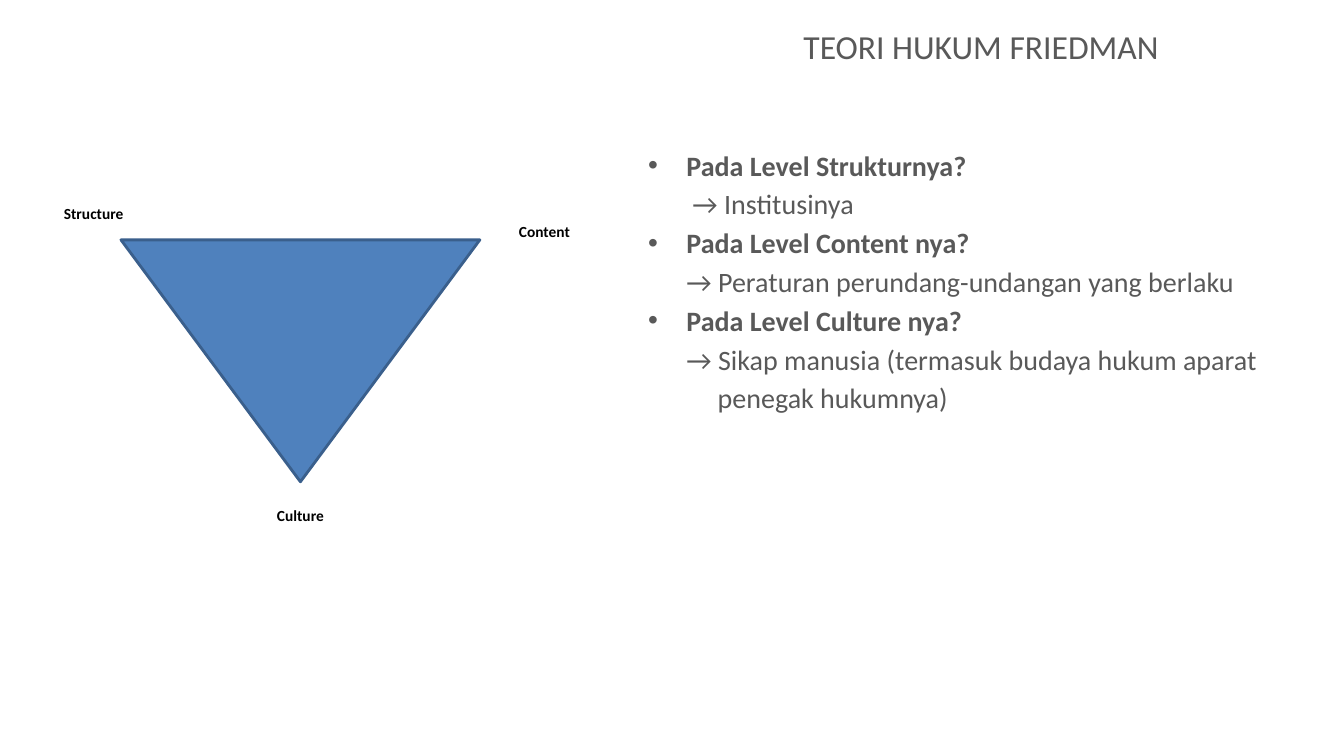
from lxml.etree import SubElement
from pptx import Presentation
from pptx.dml.color import RGBColor
from pptx.enum.shapes import MSO_SHAPE
from pptx.enum.text import MSO_ANCHOR, PP_ALIGN
from pptx.oxml.ns import qn
from pptx.util import Inches, Pt

COLORS = {"text": "595959", "label": "000000", "triangle": "4F81BD",
          "outline": "3A5F8C", "white": "FFFFFF"}


def add_text(paragraph, text, size, color, bold=False, align=PP_ALIGN.LEFT,
             indent=0, bullet=None, space_before=0, line_spacing=1.0):
    """Fill a paragraph; a bullet hangs in the space left by the indent."""
    paragraph.alignment = align
    paragraph.space_before = Pt(space_before)
    paragraph.line_spacing = line_spacing
    properties = paragraph._p.get_or_add_pPr()
    properties.set("marL", str(Inches(indent)))
    properties.set("indent", str(-Inches(indent) if bullet else 0))
    if bullet:
        SubElement(properties, qn("a:buFont"), typeface="Arial")
        SubElement(properties, qn("a:buChar"), char=bullet)
    run = paragraph.add_run()
    run.text = text
    run.font.name = "Calibri"
    run.font.size = Pt(size)
    run.font.bold = bold
    run.font.color.rgb = RGBColor.from_string(COLORS[color])


def add_filled_shape(kind, left, top, width, height, fill, line):
    shape = slide.shapes.add_shape(kind, Inches(left), Inches(top), Inches(width), Inches(height))
    shape.shadow.inherit = False
    shape.fill.solid()
    shape.fill.fore_color.rgb = RGBColor.from_string(COLORS[fill])
    shape.line.color.rgb = RGBColor.from_string(COLORS[line])
    shape.line.width = Pt(2)
    return shape


presentation = Presentation()
presentation.slide_width = Inches(13.33)
presentation.slide_height = Inches(7.5)
slide = presentation.slides.add_slide(presentation.slide_layouts[6])

# Title
title = slide.shapes.add_textbox(Inches(7.87), Inches(0.21), Inches(4.26), Inches(0.47))
title.text_frame.word_wrap = True
add_text(title.text_frame.paragraphs[0], "TEORI HUKUM FRIEDMAN", 24, "text")

# Questions with their answers: text, indent, is a question
body_lines = [
    ("Pada Level Strukturnya?", 0.38, True),
    ("→ Institusinya", 0.44, False),
    ("Pada Level Content nya?", 0.38, True),
    ("→ Peraturan perundang-undangan yang berlaku", 0.38, False),
    ("Pada Level Culture nya?", 0.38, True),
    ("→ Sikap manusia (termasuk budaya hukum aparat", 0.38, False),
    ("penegak hukumnya)", 0.69, False),
]
body = slide.shapes.add_textbox(Inches(6.33), Inches(1.42), Inches(6.64), Inches(3.36))
body.text_frame.word_wrap = True
for index, (text, indent, is_question) in enumerate(body_lines):
    paragraph = body.text_frame.add_paragraph() if index else body.text_frame.paragraphs[0]
    add_text(paragraph, text, 20, "text", bold=is_question, indent=indent,
             bullet="•" if is_question else None, space_before=3.7 if index else 0)

# Triangle and the labels at its corners
add_filled_shape(MSO_SHAPE.FLOWCHART_MERGE, 1.2, 2.38, 3.56, 2.4, "triangle", "outline")
for text, left, top in [("Content", 4.82, 2.06), ("Structure", 0.35, 1.88), ("Culture", 2.4, 4.88)]:
    label = add_filled_shape(MSO_SHAPE.RECTANGLE, left, top, 1.16, 0.46, "white", "white")
    label.text_frame.word_wrap = True
    label.text_frame.vertical_anchor = MSO_ANCHOR.MIDDLE
    add_text(label.text_frame.paragraphs[0], text, 11, "label", bold=True,
             align=PP_ALIGN.CENTER, line_spacing=1.07)

presentation.save("out.pptx")
